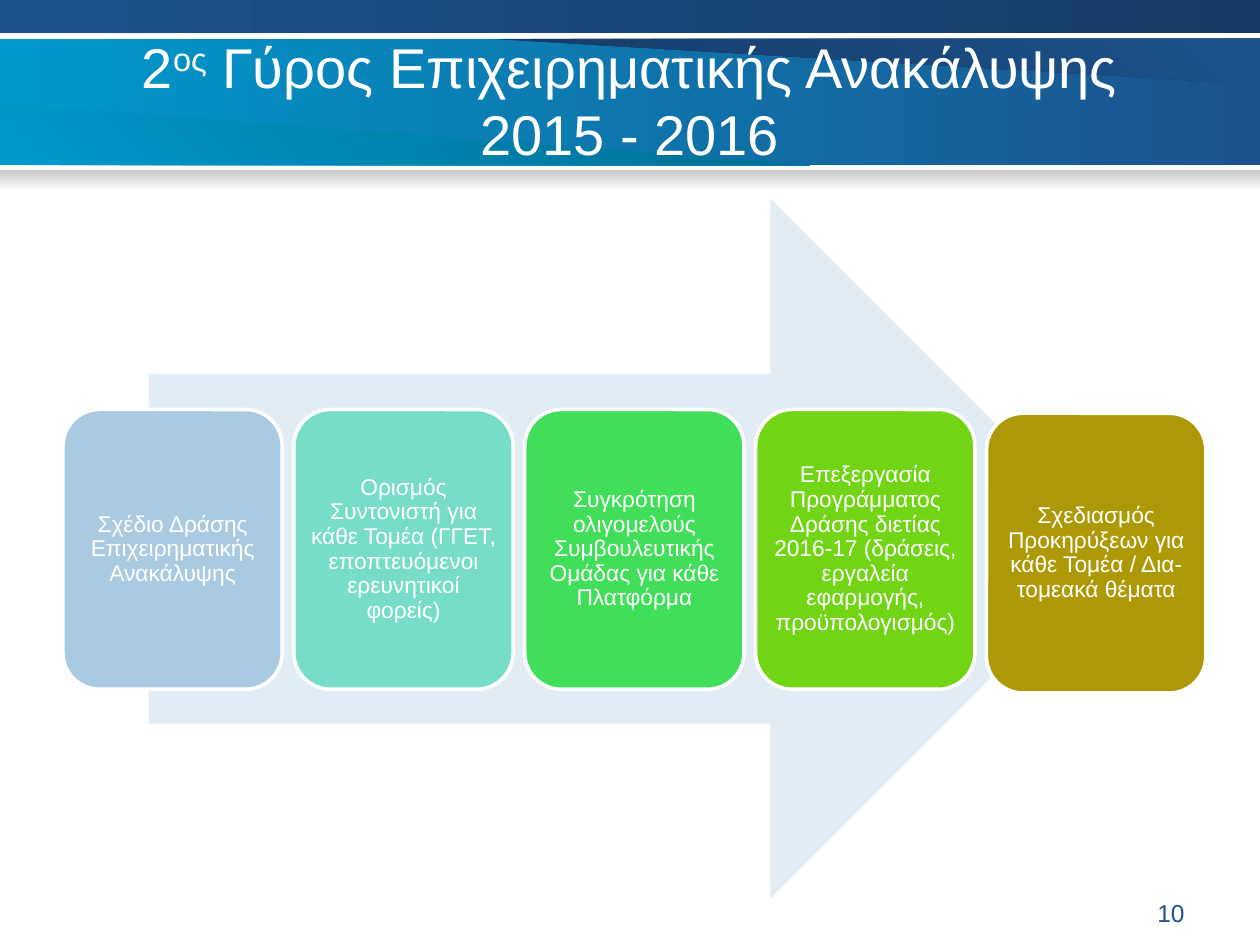
from dataclasses import dataclass

from lxml import etree
from pptx import Presentation
from pptx.dml.color import RGBColor
from pptx.enum import shapes, text
from pptx.util import Inches, Pt


@dataclass(frozen=True)
class Theme:
    font: str = "Arial"
    white: str = "FFFFFF"
    blue: str = "1D528D"
    navy: str = "153B65"
    cyan: str = "0099CC"
    teal: str = "006D92"
    grey: str = "CACACA"
    arrow: str = "E2ECF4"
    title_size: int = 32
    step_size: int = 13
    number_size: int = 14


THEME = Theme()

STEPS = [
    ("Σχέδιο Δράσης Επιχειρηματικής Ανακάλυψης", "AACAE2", 3.25),
    ("Ορισμός Συντονιστή για κάθε Τομέα (ΓΓΕΤ, εποπτευόμενοι ερευνητικοί φορείς)",
     "78DDC8", 3.25),
    ("Συγκρότηση ολιγομελούς Συμβουλευτικής Ομάδας για κάθε Πλατφόρμα", "41DF59", 3.25),
    ("Επεξεργασία Προγράμματος Δράσης διετίας 2016-17 (δράσεις, εργαλεία εφαρμογής, "
     "προϋπολογισμός)", "71D515", 3.25),
    ("Σχεδιασμός Προκηρύξεων για κάθε Τομέα / Δια-τομεακά θέματα", "AD9906", 3.28),
]


def color(value):
    return RGBColor.from_string(value)


def fill_solid(shape, value):
    shape.shadow.inherit = False
    shape.fill.solid()
    shape.fill.fore_color.rgb = color(value)
    shape.line.fill.background()


def fill_gradient(shape, start, end, angle):
    shape.shadow.inherit = False
    shape.fill.gradient()
    shape.fill.gradient_angle = angle
    for stop, value in zip(shape.fill.gradient_stops, (start, end)):
        stop.color.rgb = color(value)
    shape.line.fill.background()


def add_preset(slide, kind, left, top, width, height):
    return slide.shapes.add_shape(
        kind, Inches(left), Inches(top), Inches(width), Inches(height))


def add_polygon(slide, points):
    start, *others = [(Inches(x), Inches(y)) for x, y in points]
    builder = slide.shapes.build_freeform(*start)
    builder.add_line_segments(others, close=True)
    return builder.convert_to_shape()


def format_paragraph(paragraph, alignment, size, value):
    paragraph.alignment = alignment
    for run in paragraph.runs:
        run.font.name = THEME.font
        run.font.size = Pt(size)
        run.font.color.rgb = color(value)


def add_banner(slide, left, top, width, height):
    right, bottom = left + width, top + height
    rectangle = shapes.MSO_SHAPE.RECTANGLE
    band = add_preset(slide, rectangle, left, top, width, height)
    fill_gradient(band, THEME.cyan, THEME.blue, 0)
    upper_wedge = add_polygon(
        slide, [(3.93, top), (right, top + 0.36), (right, top)])
    fill_gradient(upper_wedge, THEME.navy, THEME.blue, 45)
    lower_wedge = add_polygon(
        slide, [(left, bottom), (6.43, bottom), (left, bottom - 0.49)])
    fill_gradient(lower_wedge, THEME.cyan, THEME.teal, 45)
    top_strip = add_preset(slide, rectangle, left, 0, width, 0.26)
    fill_gradient(top_strip, THEME.blue, THEME.navy, 0)
    soft_edge = add_preset(slide, rectangle, left, bottom + 0.04, width, 0.17)
    fill_gradient(soft_edge, THEME.grey, THEME.white, 270)


def place_title(slide, left, top, width, height):
    title = slide.shapes.title
    title.left, title.top = Inches(left), Inches(top)
    title.width, title.height = Inches(width), Inches(height)
    frame = title.text_frame
    frame.vertical_anchor = text.MSO_ANCHOR.TOP
    frame.auto_size = text.MSO_AUTO_SIZE.NONE
    paragraph = frame.paragraphs[0]
    for part in ("2", "ος", " Γύρος Επιχειρηματικής Ανακάλυψης 2015 - 2016"):
        paragraph.add_run().text = part
    format_paragraph(paragraph, text.PP_ALIGN.CENTER, THEME.title_size, THEME.white)
    ordinal = paragraph.runs[1]
    ordinal._r.get_or_add_rPr().set("baseline", "30000")
    slide.shapes.element.append(title.element)


def add_step(slide, label, value, left, top, width, height):
    step = add_preset(
        slide, shapes.MSO_SHAPE.ROUNDED_RECTANGLE, left, top, width, height)
    fill_solid(step, value)
    step.line.color.rgb = color(THEME.white)
    step.line.width = Pt(2)
    frame = step.text_frame
    frame.word_wrap = True
    frame.vertical_anchor = text.MSO_ANCHOR.MIDDLE
    frame.margin_left = frame.margin_right = Inches(0.05)
    frame.margin_top = frame.margin_bottom = Inches(0.05)
    frame.text = label
    paragraph = frame.paragraphs[0]
    paragraph.line_spacing = 0.9
    format_paragraph(paragraph, text.PP_ALIGN.CENTER, THEME.step_size, THEME.white)


def add_process(slide, left, top, width, height):
    arrow_width = 0.85 * width
    arrow = add_preset(
        slide, shapes.MSO_SHAPE.RIGHT_ARROW,
        left + (width - arrow_width) / 2, top, arrow_width, height)
    fill_solid(arrow, THEME.arrow)
    step_width, step_height = 1.74, 0.4 * height
    pitch = (width - step_width) / (len(STEPS) - 1)
    for index, (label, value, step_top) in enumerate(STEPS):
        add_step(slide, label, value, left + index * pitch, step_top,
                 step_width, step_height)


def add_page_number(slide, left, top, width, height):
    box = slide.shapes.add_textbox(
        Inches(left), Inches(top), Inches(width), Inches(height))
    box.text_frame.word_wrap = True
    box.text_frame.text = "10"
    format_paragraph(box.text_frame.paragraphs[0], text.PP_ALIGN.RIGHT,
                     THEME.number_size, THEME.blue)


def main():
    presentation = Presentation()
    presentation.slide_width = Inches(10)
    presentation.slide_height = Inches(7.5)
    slide = presentation.slides.add_slide(presentation.slide_layouts[5])
    add_banner(slide, 0, 0.31, 10, 1)
    place_title(slide, 0.5, 0.21, 9, 1.34)
    add_process(slide, 0.5, 1.58, 9.07, 5.55)
    add_page_number(slide, 7.17, 7.08, 2.33, 0.27)
    presentation.save("out.pptx")


if __name__ == "__main__":
    main()
